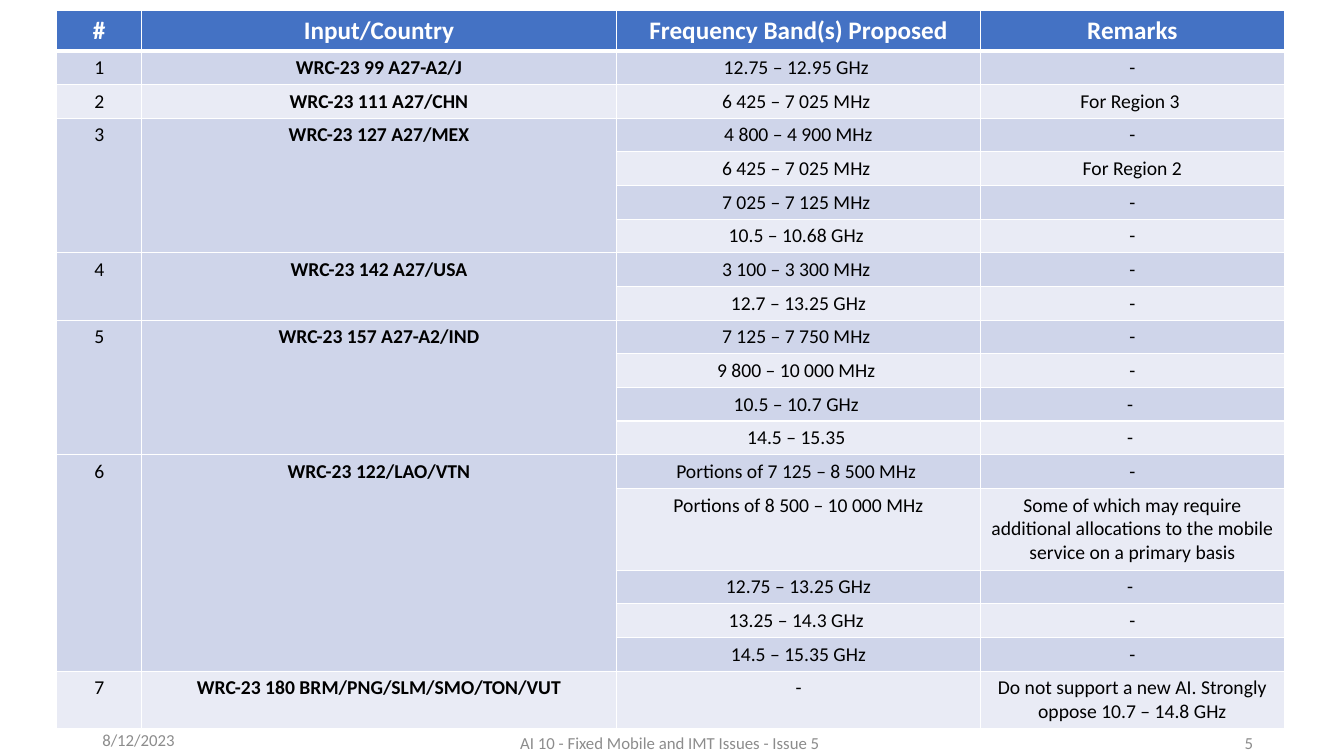
from lxml.etree import SubElement
from pptx import Presentation
from pptx.dml.color import RGBColor as RGB
from pptx.enum.text import MSO_ANCHOR as ANCHOR, PP_ALIGN as ALIGN
from pptx.oxml import parse_xml
from pptx.oxml.ns import nsdecls, qn
from pptx.util import Pt

PX = 9525
FONT = "Calibri"
COLORS = {
    "header": "4472C4",
    "odd": "CFD5EA",
    "even": "E9EBF5",
    "border": "FFFFFF",
    "header_text": "FFFFFF",
    "text": "000000",
    "footer": "8C8C8C",
}
HEADERS = ["#", "Input/Country", "Frequency Band(s) Proposed", "Remarks"]
PROPOSALS = [
    ("WRC-23 99 A27-A2/J", [("12.75 – 12.95 GHz ", "-")]),
    ("WRC-23 111 A27/CHN", [("6 425 – 7 025 MHz ", "For Region 3 ")]),
    ("WRC-23 127 A27/MEX", [
        ("4 800 – 4 900 MHz", "-"),
        ("6 425 – 7 025 MHz ", "For Region 2"),
        ("7 025 – 7 125 MHz ", "-"),
        ("10.5 – 10.68 GHz ", "-"),
    ]),
    ("WRC-23 142 A27/USA", [
        ("3 100 – 3 300 MHz ", "-"),
        ("12.7 – 13.25 GHz", "-"),
    ]),
    ("WRC-23 157 A27-A2/IND", [
        ("7 125 – 7 750 MHz ", "-"),
        ("9 800 – 10 000 MHz ", "-"),
        ("10.5 – 10.7 GHz ", "- "),
        ("14.5 – 15.35 ", "- "),
    ]),
    ("WRC-23 122/LAO/VTN", [
        ("Portions of 7 125 – 8 500 MHz ", "-"),
        ("Portions of 8 500 – 10 000 MHz",
         "Some of which may require additional allocations to the mobile "
         "service on a primary basis"),
        ("12.75 – 13.25 GHz", "- "),
        ("13.25 – 14.3 GHz ", "-"),
        ("14.5 – 15.35 GHz", "-"),
    ]),
    ("WRC-23 180 BRM/PNG/SLM/SMO/TON/VUT", [
        ("-", "Do not support a new AI. Strongly oppose 10.7 – 14.8 GHz"),
    ]),
]
COL_WIDTHS = [81, 452, 347, 289]
HEADER_HEIGHT, ROW_HEIGHT = 38, 32
TALL_ROWS = {14: 78, 18: 54}
FOOTERS = [
    ("8/12/2023", 88, 686, 288, ALIGN.LEFT),
    ("AI 10 - Fixed Mobile and IMT Issues - Issue 5 ", 424, 688, 432, ALIGN.CENTER),
    ("5", 915, 688, 288, ALIGN.RIGHT),
]


def rgb(name):
    return RGB.from_string(COLORS[name])


def write(tf, text, size, color, align, bold=False):
    tf.text = text
    p = tf.paragraphs[0]
    p.alignment = align
    for r in p.runs:
        r.font.name = FONT
        r.font.size = Pt(size)
        r.font.bold = bold
        r.font.color.rgb = rgb(color)


def add_footer(slide, text, x, y, w, align):
    tf = slide.shapes.add_textbox(x * PX, y * PX, w * PX, 38 * PX).text_frame
    tf.word_wrap = True
    tf.vertical_anchor = ANCHOR.MIDDLE
    write(tf, text, 12, "footer", align)


def set_borders(cell, bottom):
    tc_pr = cell._tc.get_or_add_tcPr()
    for i, (side, width) in enumerate([("L", 1), ("R", 1), ("T", 1), ("B", bottom)]):
        ln = parse_xml(f'<a:ln{side} {nsdecls("a")} w="{Pt(width)}"/>')
        fill = SubElement(ln, qn("a:solidFill"))
        SubElement(fill, qn("a:srgbClr")).set("val", COLORS["border"])
        tc_pr.insert(i, ln)


def style_cell(cell, fill, bottom=1):
    cell.fill.solid()
    cell.fill.fore_color.rgb = rgb(fill)
    set_borders(cell, bottom)


def fill_header(table):
    for col, text in enumerate(HEADERS):
        cell = table.cell(0, col)
        style_cell(cell, "header", 3)
        write(cell.text_frame, text, 18, "header_text", ALIGN.CENTER, True)


def fill_proposal(table, top, number, country, bands):
    last = top + len(bands) - 1
    for row, (band, remark) in enumerate(bands, top):
        values = [str(number), country] if row == top else ["", ""]
        for col, text in enumerate(values + [band, remark]):
            cell = table.cell(row, col)
            style_cell(cell, "odd" if row % 2 else "even")
            write(cell.text_frame, text, 14, "text", ALIGN.CENTER, col == 1)
    if last > top:
        for col in range(2):
            table.cell(top, col).merge(table.cell(last, col))


def add_band_table(slide):
    count = 1 + sum(len(bands) for _, bands in PROPOSALS)
    heights = [HEADER_HEIGHT] + [TALL_ROWS.get(i, ROW_HEIGHT) for i in range(1, count)]
    table = slide.shapes.add_table(
        count, len(HEADERS), 54 * PX, 10 * PX,
        sum(COL_WIDTHS) * PX, sum(heights) * PX).table
    for column, width in zip(table.columns, COL_WIDTHS):
        column.width = width * PX
    for row, height in zip(table.rows, heights):
        row.height = height * PX
    fill_header(table)
    top = 1
    for number, (country, bands) in enumerate(PROPOSALS, 1):
        fill_proposal(table, top, number, country, bands)
        top += len(bands)


def main():
    prs = Presentation()
    prs.slide_width, prs.slide_height = 1280 * PX, 720 * PX
    slide = prs.slides.add_slide(prs.slide_layouts[6])
    for footer in FOOTERS:
        add_footer(slide, *footer)
    add_band_table(slide)
    prs.save("out.pptx")


if __name__ == "__main__":
    main()
